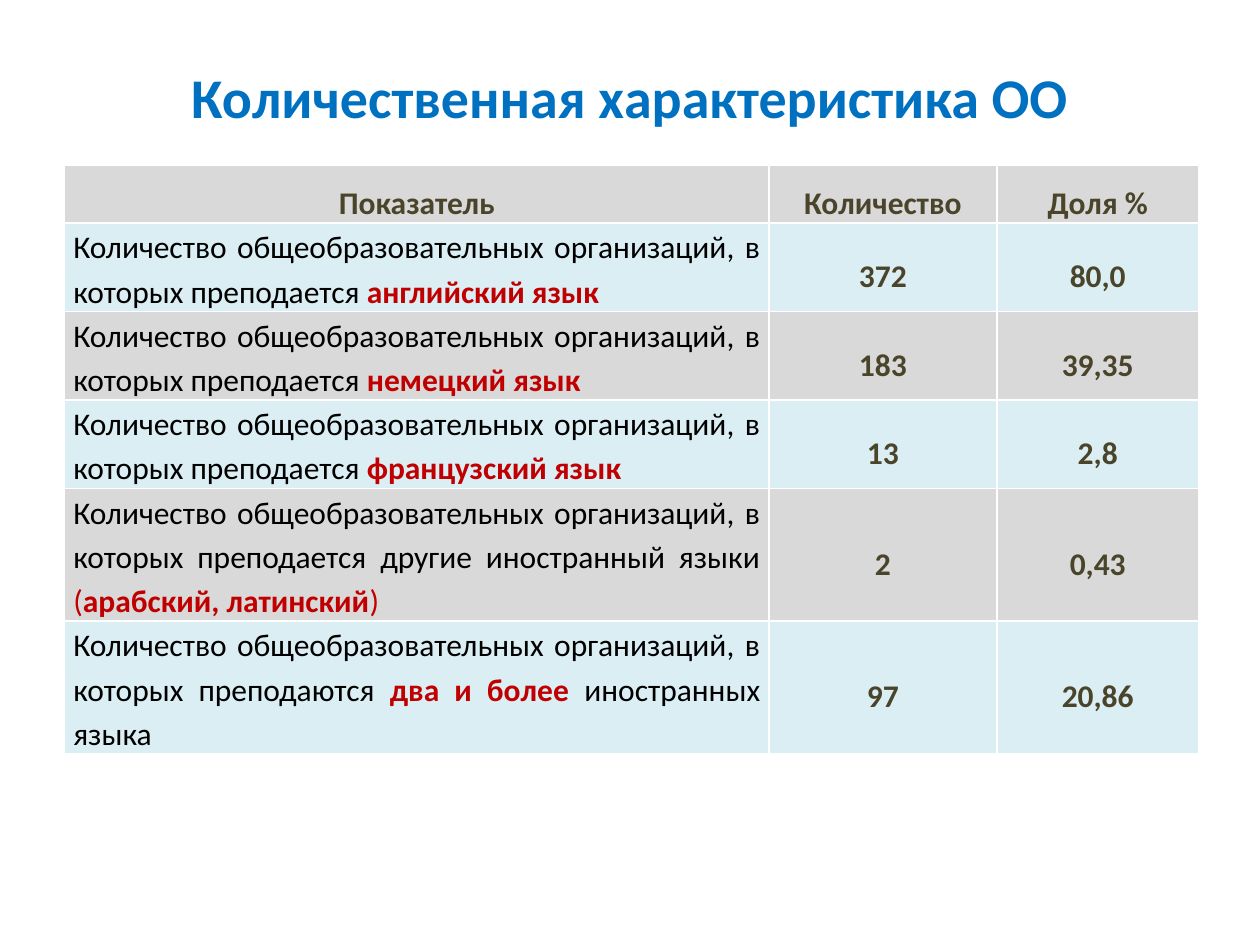
from pptx import Presentation
from pptx.dml.color import RGBColor
from pptx.enum.text import MSO_ANCHOR, PP_ALIGN
from pptx.util import Pt

COLORS = {
    "title": "0070C0",
    "figure": "4A452A",
    "text": "000000",
    "accent": "C00000",
    "gray": "D9D9D9",
    "blue": "DBEEF4",
}
COMMON = "Количество общеобразовательных организаций, в которых "
HEADINGS = ["Показатель", "Количество", "Доля %"]
INDICATORS = [
    ([("преподается ", "text", False), ("английский язык", "accent", True)], "372", "80,0"),
    ([("преподается ", "text", False), ("немецкий язык", "accent", True)], "183", "39,35"),
    ([("преподается ", "text", False), ("французский язык", "accent", True)], "13", "2,8"),
    ([("преподается другие иностранный языки ", "text", False), ("(", "accent", False),
      ("арабский, латинский", "accent", True), (")", "accent", False)], "2", "0,43"),
    ([("преподаются ", "text", False), ("два и более ", "accent", True),
      ("иностранных языка", "text", False)], "97", "20,86"),
]
COLUMN_WIDTHS = [402.5, 130.3, 115.2]
ROW_HEIGHTS = [32, 50.5, 50.5, 50.5, 75.5, 75.5]


def style(font, size, color, bold):
    font.name = "Calibri"
    font.size = Pt(size)
    font.bold = bold
    font.color.rgb = RGBColor.from_string(COLORS[color])


def fill_figure(cell, text):
    paragraph = cell.text_frame.paragraphs[0]
    paragraph.text = text
    paragraph.alignment = PP_ALIGN.CENTER
    paragraph.line_spacing = 1.5
    style(paragraph.font, 18, "figure", True)


prs = Presentation()
prs.slide_width, prs.slide_height = Pt(720), Pt(540)
slide = prs.slides.add_slide(prs.slide_layouts[5])

title = slide.shapes.title
title.left, title.top, title.width, title.height = Pt(36), Pt(21.6), Pt(648), Pt(67)
title.text_frame.vertical_anchor = MSO_ANCHOR.MIDDLE
heading = title.text_frame.paragraphs[0]
heading.text = "Количественная характеристика ОО"
heading.alignment = PP_ALIGN.CENTER
style(heading.font, 32, "title", True)

indicators = slide.shapes.add_table(
    len(ROW_HEIGHTS), len(COLUMN_WIDTHS),
    Pt(36.9), Pt(94.5), Pt(sum(COLUMN_WIDTHS)), Pt(sum(ROW_HEIGHTS)),
).table
for column, width in zip(indicators.columns, COLUMN_WIDTHS):
    column.width = Pt(width)
for index, (row, height) in enumerate(zip(indicators.rows, ROW_HEIGHTS)):
    row.height = Pt(height)
    for cell in row.cells:
        cell.margin_left = cell.margin_right = Pt(5)
        cell.margin_top = cell.margin_bottom = Pt(0)
        cell.fill.solid()
        cell.fill.fore_color.rgb = RGBColor.from_string(COLORS["blue" if index % 2 else "gray"])

for column, name in enumerate(HEADINGS):
    fill_figure(indicators.cell(0, column), name)

for row, (ending, count, share) in enumerate(INDICATORS, start=1):
    description = indicators.cell(row, 0).text_frame.paragraphs[0]
    description.alignment = PP_ALIGN.JUSTIFY
    description.line_spacing = 1.15
    (first_text, first_color, first_bold), *rest = ending
    for text, color, bold in [(COMMON + first_text, first_color, first_bold), *rest]:
        run = description.add_run()
        run.text = text
        style(run.font, 18, color, bold)
    for column, figure in enumerate([count, share], start=1):
        cell = indicators.cell(row, column)
        cell.vertical_anchor = MSO_ANCHOR.MIDDLE
        fill_figure(cell, figure)

prs.save("out.pptx")
